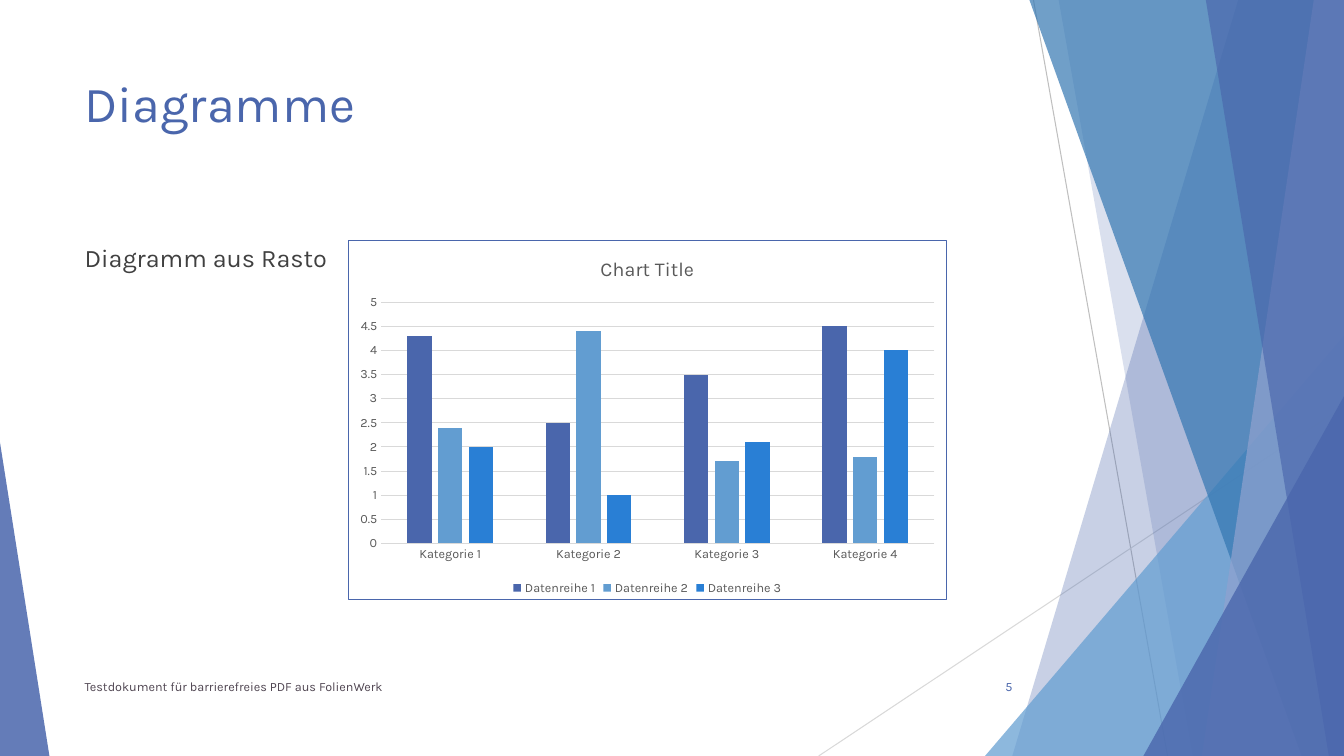
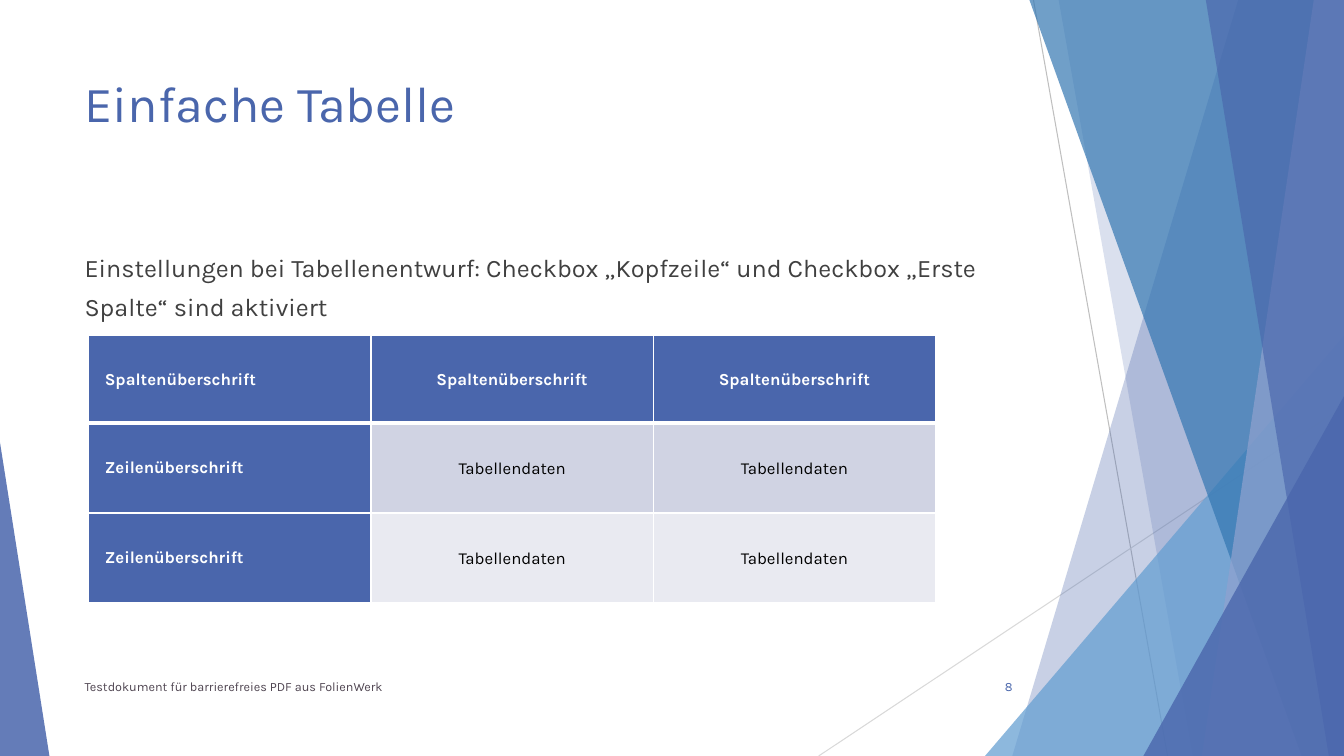
from lxml import etree
from pptx import Presentation
from pptx.chart.data import CategoryChartData
from pptx.dml.color import RGBColor
from pptx.enum.chart import XL_CHART_TYPE, XL_LEGEND_POSITION, XL_TICK_MARK
from pptx.enum.shapes import MSO_CONNECTOR, MSO_SHAPE
from pptx.enum.text import MSO_ANCHOR, PP_ALIGN
from pptx.oxml import parse_xml
from pptx.oxml.ns import nsdecls, qn
from pptx.util import Inches, Pt

COLUMN = XL_CHART_TYPE.COLUMN_CLUSTERED
LEGEND_BOTTOM = XL_LEGEND_POSITION.BOTTOM
NO_TICK = XL_TICK_MARK.NONE
STRAIGHT = MSO_CONNECTOR.STRAIGHT
TRIANGLE = MSO_SHAPE.ISOSCELES_TRIANGLE
TOP, MIDDLE = MSO_ANCHOR.TOP, MSO_ANCHOR.MIDDLE
LEFT, CENTER, RIGHT = PP_ALIGN.LEFT, PP_ALIGN.CENTER, PP_ALIGN.RIGHT

WHITE = RGBColor(0xFF, 0xFF, 0xFF)
BLACK = RGBColor(0, 0, 0)
INDIGO = RGBColor(0x4A, 0x66, 0xAC)
SKY = RGBColor(0x62, 0x9D, 0xD1)
BRIGHT = RGBColor(0x29, 0x7F, 0xD5)
STEEL = RGBColor(0x34, 0x77, 0xB2)
LAVENDER = RGBColor(0x90, 0xA2, 0xCF)
BODY_GRAY = RGBColor(0x40, 0x40, 0x40)
FOOTER_GRAY = RGBColor(0x50, 0x46, 0x52)
CHART_GRAY = RGBColor(0x59, 0x59, 0x59)
MID_GRAY = RGBColor(0xBF, 0xBF, 0xBF)
LIGHT_GRAY = RGBColor(0xD9, 0xD9, 0xD9)
BAND_DARK = RGBColor(0xD0, 0xD3, 0xE3)
BAND_LIGHT = RGBColor(0xE9, 0xEA, 0xF1)

FONT = "Karla"
WIDTH, HEIGHT = 13.33, 7.5
FOOTER = "Testdokument für barrierefreies PDF aus FolienWerk"

RAYS = [
    ((10.25, 0), (11.58, HEIGHT), MID_GRAY),
    ((WIDTH, 4.03), (8.12, HEIGHT), LIGHT_GRAY),
]
BACK_FACETS = [
    ("band", 12.28, 10.04, INDIGO, 30),
    ("band", 10.5, 11.83, INDIGO, 20),
    ("corner", 9.77, 3.33, SKY, 72),
    ("band", 10.21, 12.91, STEEL, 70),
    ("band", 13.03, 11.92, LAVENDER, 70),
    ("band", 11.96, 13.18, INDIGO, 65),
    ("corner", 11.34, 3.93, INDIGO, 80),
]


def style_font(font, size, color, bold=False):
    font.name = FONT
    font.size = Pt(size)
    font.color.rgb = color
    font.bold = bold


def paint(shape, color, opacity):
    shape.shadow.inherit = False
    shape.fill.solid()
    shape.fill.fore_color.rgb = color
    shape.line.fill.background()
    tint = shape._element.spPr.find(".//" + qn("a:srgbClr"))
    etree.SubElement(tint, qn("a:alpha"), val=str(opacity * 1000))


def add_ray(page, start, end, color):
    ray = page.shapes.add_connector(STRAIGHT, *map(Inches, start + end))
    ray.line.color.rgb = color
    ray.line.width = Pt(0.75)
    etree.SubElement(ray._element.spPr, qn("a:effectLst"))


def add_band(page, top_x, bottom_x, color, opacity):
    outline = page.shapes.build_freeform(Inches(top_x), 0)
    corners = [(WIDTH, 0), (WIDTH, HEIGHT), (bottom_x, HEIGHT)]
    outline.add_line_segments([(Inches(x), Inches(y)) for x, y in corners])
    paint(outline.convert_to_shape(), color, opacity)


def add_triangle(page, left, top, width, apex, color, opacity):
    box = map(Inches, (left, top, width, HEIGHT - top))
    triangle = page.shapes.add_shape(TRIANGLE, *box)
    triangle.adjustments[0] = apex
    paint(triangle, color, opacity)


def add_backdrop(page):
    for start, end, color in RAYS:
        add_ray(page, start, end, color)
    for kind, left, other, color, opacity in BACK_FACETS:
        if kind == "band":
            add_band(page, left, other, color, opacity)
        else:
            add_triangle(page, left, other, WIDTH - left, 1, color, opacity)
    add_triangle(page, 0, 4.39, 0.49, 0, INDIGO, 85)


def add_text(page, box, text, size, color, anchor=TOP, align=LEFT):
    frame = page.shapes.add_textbox(*map(Inches, box)).text_frame
    frame.word_wrap = True
    frame.vertical_anchor = anchor
    para = frame.paragraphs[0]
    para.text = text
    para.alignment = align
    style_font(para.font, size, color)
    return para


def add_page(deck, title, body, number):
    page = deck.slides.add_slide(deck.slide_layouts[6])
    add_backdrop(page)
    add_text(page, (0.74, 0.67, 9.4, 1.44), title, 36, INDIGO)
    para = add_text(page, (0.74, 2.36, 9.4, 4.24), body, 18, BODY_GRAY)
    para.space_before = Pt(10)
    add_text(page, (0.74, 6.61, 6.89, 0.4), FOOTER, 9, FOOTER_GRAY, MIDDLE)
    add_text(page, (9.39, 6.61, 0.75, 0.4), number, 9, INDIGO, MIDDLE, RIGHT)
    return page, para


def frame_chart(chart, color):
    border = parse_xml(
        f'<c:spPr {nsdecls("c", "a")}><a:solidFill><a:srgbClr val="{WHITE}"/></a:solidFill>'
        f'<a:ln w="{Pt(0.75)}"><a:solidFill><a:srgbClr val="{color}"/></a:solidFill></a:ln></c:spPr>'
    )
    chart._chartSpace.find(qn("c:chart")).addnext(border)


def add_column_chart(page, box):
    data = CategoryChartData()
    data.categories = [f"Kategorie {index}" for index in range(1, 5)]
    data.add_series("Datenreihe 1", (4.3, 2.5, 3.5, 4.5))
    data.add_series("Datenreihe 2", (2.4, 4.4, 1.7, 1.8))
    data.add_series("Datenreihe 3", (2, 1, 2.1, 4))
    chart = page.shapes.add_chart(COLUMN, *map(Inches, box), data).chart
    style_font(chart.font, 10, BLACK)
    frame_chart(chart, INDIGO)

    chart.has_title = True
    heading = chart.chart_title.text_frame
    heading.text = "Chart Title"
    style_font(heading.paragraphs[0].font, 14, CHART_GRAY)
    chart.chart_title.include_in_layout = False

    chart.has_legend = True
    chart.legend.position = LEGEND_BOTTOM
    chart.legend.include_in_layout = False
    style_font(chart.legend.font, 9, CHART_GRAY)

    for axis in (chart.category_axis, chart.value_axis):
        axis.major_tick_mark = axis.minor_tick_mark = NO_TICK
        style_font(axis.tick_labels.font, 9, CHART_GRAY)
    chart.category_axis.format.line.color.rgb = LIGHT_GRAY
    chart.category_axis.format.line.width = Pt(0.75)
    values = chart.value_axis
    values.minimum_scale, values.maximum_scale, values.major_unit = 0, 5, 0.5
    values.format.line.fill.background()
    values.major_gridlines.format.line.color.rgb = LIGHT_GRAY
    values.major_gridlines.format.line.width = Pt(0.75)

    plot = chart.plots[0]
    plot.gap_width, plot.overlap = 219, -27
    plot.vary_by_categories = False
    for series, color in zip(plot.series, (INDIGO, SKY, BRIGHT)):
        series.format.fill.solid()
        series.format.fill.fore_color.rgb = color
        series.invert_if_negative = False


def set_borders(cell, top, bottom):
    sides = {"lnL": 1, "lnR": 1, "lnT": top, "lnB": bottom}
    for index, (side, width) in enumerate(sides.items()):
        edge = parse_xml(
            f'<a:{side} {nsdecls("a")} w="{Pt(width)}"><a:solidFill>'
            f'<a:srgbClr val="{WHITE}"/></a:solidFill></a:{side}>'
        )
        cell._tc.get_or_add_tcPr().insert(index, edge)


def fill_cell(cell, text, row, column):
    is_heading = row == 0 or column == 0
    cell.fill.solid()
    cell.fill.fore_color.rgb = INDIGO if is_heading else (BAND_DARK, BAND_LIGHT)[row - 1]
    set_borders(cell, 3 if row == 1 else 1, 3 if row == 0 else 1)
    cell.vertical_anchor = MIDDLE
    cell.margin_left = Inches(0.07 if column else 0.16)
    cell.margin_right = Inches(0.07)
    cell.margin_top = cell.margin_bottom = 0
    para = cell.text_frame.paragraphs[0]
    para.text = text
    para.alignment = CENTER if column else LEFT
    style_font(para.font, 12, WHITE if is_heading else BLACK, is_heading)
    if is_heading:
        para.space_before = para.space_after = Pt(6)
    else:
        para.line_spacing = 1.07
        para.space_after = Pt(8)


def add_simple_table(page, box):
    rows = [["Spaltenüberschrift"] * 3]
    rows += [["Zeilenüberschrift", "Tabellendaten", "Tabellendaten"]] * 2
    table = page.shapes.add_table(3, 3, *map(Inches, box)).table
    table.first_col = True
    table.horz_banding = False
    for column in table.columns:
        column.width = Inches(box[2] / 3)
    for row, height in zip(table.rows, (0.87, 0.89, 0.89)):
        row.height = Inches(height)
    for row, texts in enumerate(rows):
        for column, text in enumerate(texts):
            fill_cell(table.cell(row, column), text, row, column)


def add_chart_page(deck):
    page, _ = add_page(deck, "Diagramme", "Diagramm aus Rasto", "5")
    add_column_chart(page, (3.45, 2.38, 5.94, 3.57))


def add_table_page(deck):
    body = (
        "Einstellungen bei Tabellenentwurf: Checkbox „Kopfzeile“ "
        "und Checkbox „Erste Spalte“ sind aktiviert"
    )
    page, para = add_page(deck, "Einfache Tabelle", body, "8")
    para.line_spacing = 1.3
    add_simple_table(page, (0.88, 3.33, 8.4, 2.65))


def main():
    deck = Presentation()
    deck.slide_width, deck.slide_height = Inches(WIDTH), Inches(HEIGHT)
    add_chart_page(deck)
    add_table_page(deck)
    deck.save("out.pptx")


if __name__ == "__main__":
    main()
